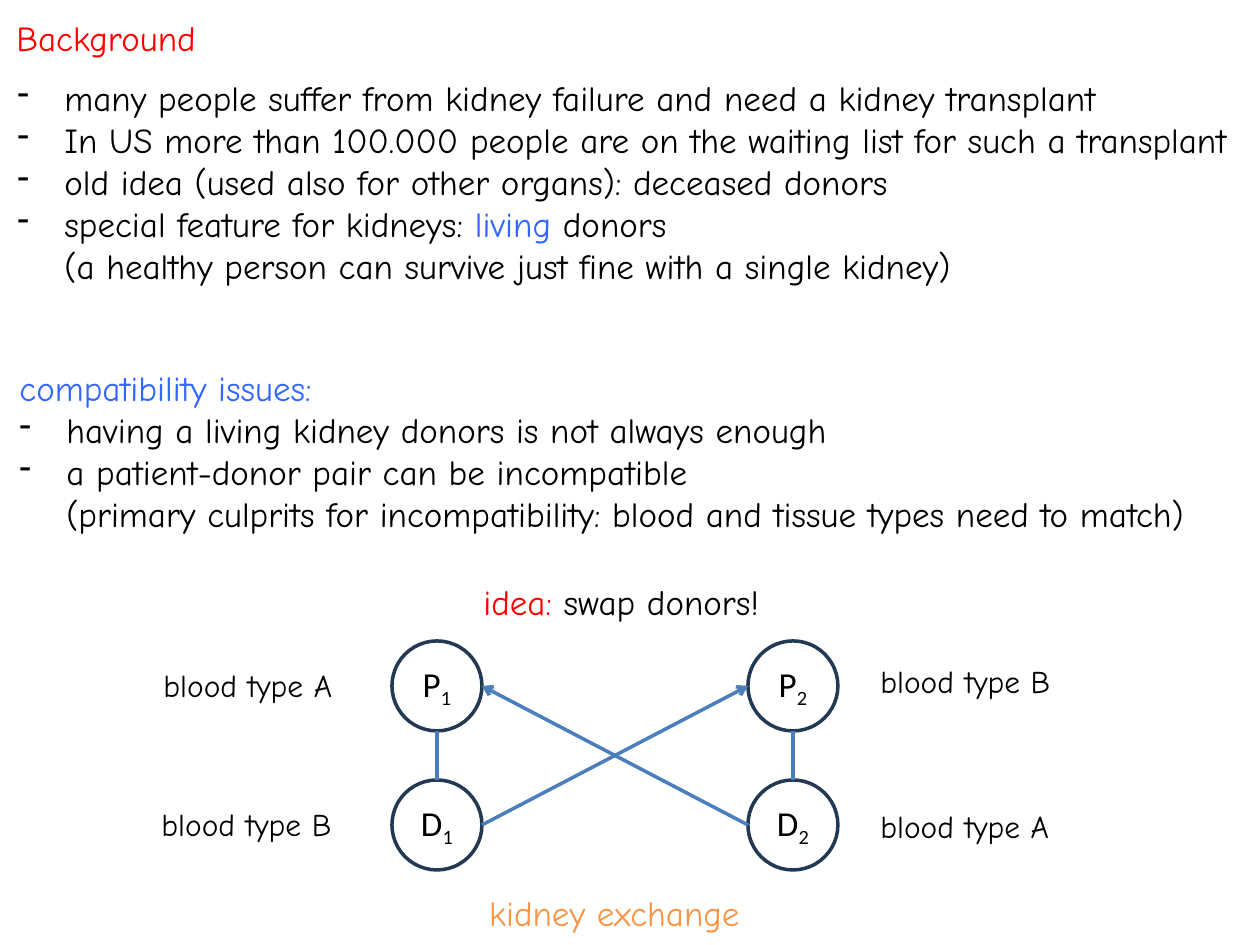
import pptx
import pptx.dml.color
import pptx.enum.shapes
import pptx.enum.text
import pptx.oxml.ns
import pptx.util
import lxml.etree

RED = pptx.dml.color.RGBColor(0xFF, 0x00, 0x00)
BLUE = pptx.dml.color.RGBColor(0x33, 0x66, 0xFF)
ORANGE = pptx.dml.color.RGBColor(0xF7, 0x96, 0x46)
BLACK = pptx.dml.color.RGBColor(0x00, 0x00, 0x00)
WHITE = pptx.dml.color.RGBColor(0xFF, 0xFF, 0xFF)
NAVY = pptx.dml.color.RGBColor(0x23, 0x39, 0x53)
STEEL = pptx.dml.color.RGBColor(0x4B, 0x7E, 0xBC)
LEFT = pptx.enum.text.PP_ALIGN.LEFT
CENTER = pptx.enum.text.PP_ALIGN.CENTER
EMU_PER_PX = 914400 // 126


def px(length):
    return pptx.util.Emu(length * EMU_PER_PX)


def add_child(parent, tag, **attributes):
    return lxml.etree.SubElement(parent, pptx.oxml.ns.qn(tag), **attributes)


def add_text(paragraph, text, font="Comic Neue", size=20, color=BLACK, baseline=None):
    for index, line in enumerate(text.split("\n")):
        if index:
            paragraph.add_line_break()
        run = paragraph.add_run()
        run.text = line
        run.font.name = font
        run.font.size = pptx.util.Pt(size)
        run.font.color.rgb = color
        if baseline is not None:
            run.font._element.set("baseline", str(baseline * 1000))


class SlideBuilder:
    """Draws text, nodes and links in one style on the current slide."""

    def __init__(self, slide):
        self.slide = slide
        self.line_width = pptx.util.Pt(2)
        self.indent = px(47)

    def text_box(self, left, top, width, height, paragraphs, size=20, align=LEFT):
        shape = self.slide.shapes.add_textbox(px(left), px(top), px(width), px(height))
        frame = shape.text_frame
        frame.word_wrap = True
        for index, (bulleted, runs) in enumerate(paragraphs):
            paragraph = frame.add_paragraph() if index else frame.paragraphs[0]
            paragraph.alignment = align
            if bulleted:
                self.bullet(paragraph)
            for text, color in runs:
                add_text(paragraph, text, size=size, color=color)

    def bullet(self, paragraph):
        properties = paragraph._p.get_or_add_pPr()
        properties.set("marL", str(self.indent))
        properties.set("indent", str(-self.indent))
        add_child(properties, "a:buFontTx")
        add_child(properties, "a:buChar", char="-")

    def node(self, left, top, diameter, letter, number):
        shape = self.slide.shapes.add_shape(
            pptx.enum.shapes.MSO_SHAPE.OVAL, px(left), px(top), px(diameter), px(diameter))
        shape.shadow.inherit = False
        shape.fill.solid()
        shape.fill.fore_color.rgb = WHITE
        shape.line.color.rgb = NAVY
        shape.line.width = self.line_width
        frame = shape.text_frame
        frame.word_wrap = False
        frame.vertical_anchor = pptx.enum.text.MSO_ANCHOR.MIDDLE
        paragraph = frame.paragraphs[0]
        paragraph.alignment = CENTER
        add_text(paragraph, letter, font="Calibri")
        add_text(paragraph, number, font="Calibri", baseline=-25)

    def link(self, start, end, arrow=False):
        connector = self.slide.shapes.add_connector(
            pptx.enum.shapes.MSO_CONNECTOR.STRAIGHT, *map(px, start + end))
        connector.line.color.rgb = STEEL
        connector.line.width = self.line_width
        if arrow:
            add_child(connector.line._get_or_add_ln(), "a:tailEnd", type="arrow")
        add_child(connector._element.spPr, "a:effectLst")


def main():
    presentation = pptx.Presentation()
    presentation.slide_width = px(1260)
    presentation.slide_height = px(945)
    builder = SlideBuilder(presentation.slides.add_slide(presentation.slide_layouts[6]))

    builder.text_box(4, 10, 1221, 55, [(False, [("Background", RED)])])
    builder.text_box(5, 70, 1246, 267, [
        (True, [("many people suffer from kidney failure and need a kidney transplant", BLACK)]),
        (True, [("In US more than 100.000 people are on the waiting list for such a transplant", BLACK)]),
        (True, [("old idea (used also for other organs): deceased donors", BLACK)]),
        (True, [("special feature for kidneys: ", BLACK), ("living", BLUE),
                (" donors\n(a healthy person can survive just fine with a single kidney)", BLACK)]),
    ])
    builder.text_box(7, 360, 1246, 224, [
        (False, [("compatibility issues:", BLUE)]),
        (True, [("having a living kidney donors is not always enough", BLACK)]),
        (True, [("a patient-donor pair can be incompatible\n"
                 "(primary culprits for incompatibility: blood and tissue types need to match)", BLACK)]),
    ])
    builder.text_box(471, 574, 387, 55, [(False, [("idea: ", RED), ("swap donors!", BLACK)])])

    diameter = 90
    radius = diameter // 2
    pair_lefts = (392, 748)
    patient_top, donor_top = 641, 780
    for number, left in enumerate(pair_lefts, 1):
        builder.node(left, patient_top, diameter, "P", str(number))
        builder.node(left, donor_top, diameter, "D", str(number))
        builder.link((left + radius, patient_top + diameter), (left + radius, donor_top))

    inner_left, inner_right = pair_lefts[0] + diameter, pair_lefts[1]
    for donor_x, patient_x in ((inner_right, inner_left), (inner_left, inner_right)):
        builder.link((donor_x, donor_top + radius), (patient_x, patient_top + radius), arrow=True)

    for left, top, blood_type in ((151, 660, "A"), (149, 799, "B"), (868, 656, "B"), (868, 801, "A")):
        builder.text_box(left, top, 218, 50, [(False, [(f"blood type {blood_type}", BLACK)])], size=18)

    builder.text_box(421, 885, 387, 55, [(False, [("kidney exchange", ORANGE)])], align=CENTER)
    presentation.save("out.pptx")


if __name__ == "__main__":
    main()
